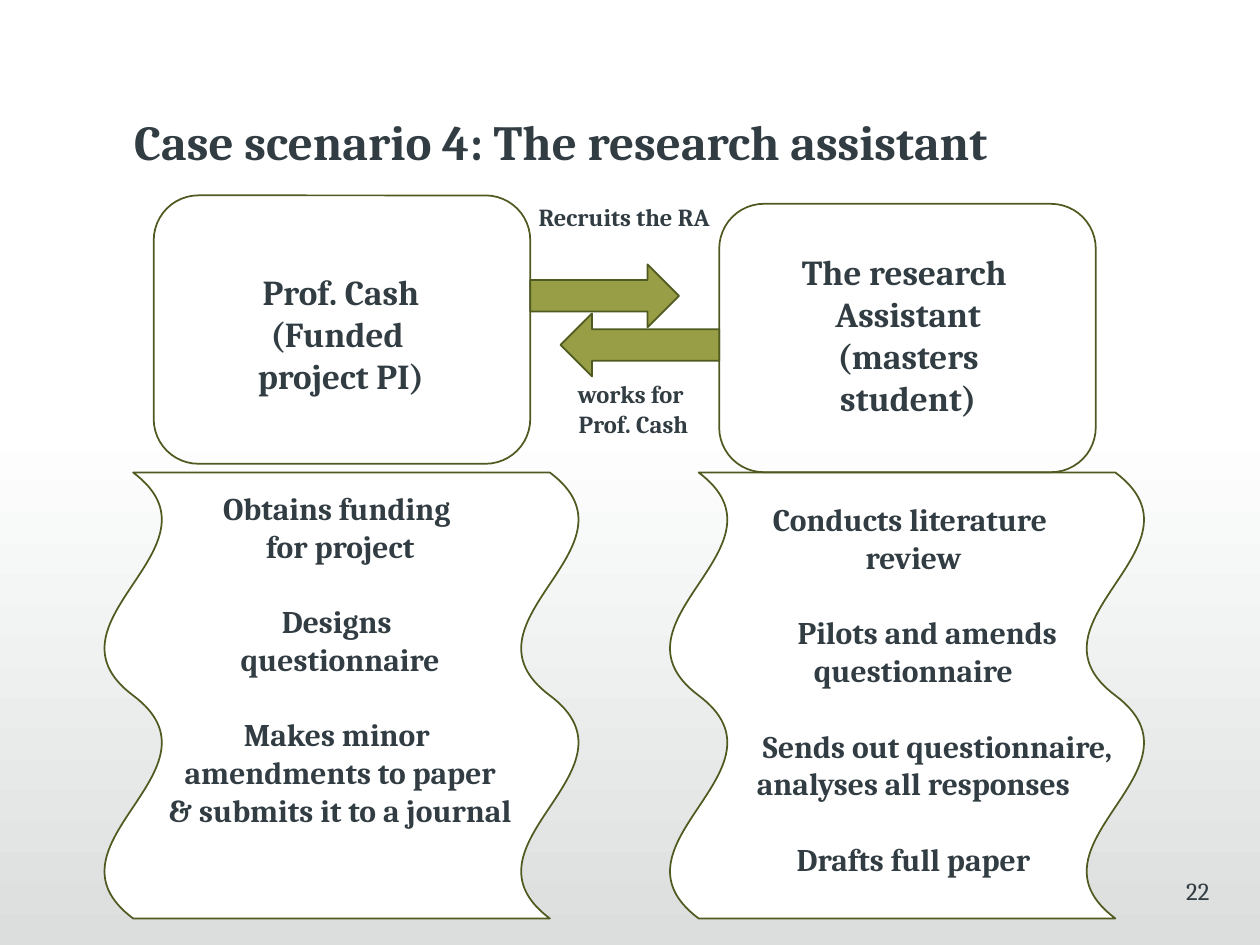
import pptx
import pptx.util
import pptx.dml.color
import pptx.enum.shapes
import pptx.enum.text

Cm, Pt = pptx.util.Cm, pptx.util.Pt
SHAPE = pptx.enum.shapes.MSO_SHAPE
ALIGN = pptx.enum.text.PP_ALIGN
COLORS = {
    "white": "FFFFFF",
    "mist": "DCDEDE",
    "outline": "4F5A20",
    "olive": "979E45",
    "ink": "323D43",
}


def rgb(name):
    return pptx.dml.color.RGBColor.from_string(COLORS[name])


class SlideBuilder:
    font = "Cambria"
    block_gap = Pt(21.5)

    def __init__(self, slide):
        self.s = slide

    def gradient(self, *box):
        """Add an unlined rectangle fading downwards from white to mist."""
        sp = self.s.shapes.add_shape(SHAPE.RECTANGLE, *map(Cm, box))
        sp.shadow.inherit = False
        sp.line.fill.background()
        sp.fill.gradient()
        sp.fill.gradient_angle = 270
        for stop, color in zip(sp.fill.gradient_stops, ("white", "mist")):
            stop.color.rgb = rgb(color)

    def shape(self, kind, *box, fill=None, rotation=0):
        sp = self.s.shapes.add_shape(kind, *map(Cm, box))
        sp.shadow.inherit = False
        sp.rotation = rotation
        if fill:
            sp.fill.solid()
            sp.fill.fore_color.rgb = rgb(fill)
        else:
            sp.fill.background()
        sp.line.color.rgb = rgb("outline")
        sp.line.width = Pt(1)

    def text(self, blocks, *box, size, wrap=False, bold=True, align=ALIGN.CENTER, right_inset=0.25):
        """Write blocks of (first-line indent in cm, lines), set apart by a gap."""
        tb = self.s.shapes.add_textbox(*map(Cm, box))
        tf = tb.text_frame
        tf.word_wrap = wrap
        tf.auto_size = pptx.enum.text.MSO_AUTO_SIZE.SHAPE_TO_FIT_TEXT
        tf.margin_right = Cm(right_inset)
        tf.text = "\n".join(line for _, lines in blocks for line in lines)
        paragraphs = iter(tf.paragraphs)
        for i, (indent, lines) in enumerate(blocks):
            for j in range(len(lines)):
                p = next(paragraphs)
                p.alignment = align
                if i and not j:
                    p.space_before = self.block_gap
                if indent:
                    p._p.get_or_add_pPr().set("indent", str(Cm(indent)))
                for r in p.runs:
                    r.font.name = self.font
                    r.font.size = Pt(size)
                    r.font.bold = bold
                    r.font.color.rgb = rgb("ink")

    def label(self, lines, *box, **style):
        self.text([(0, lines)], *box, **style)


def main():
    prs = pptx.Presentation()
    prs.slide_width, prs.slide_height = Cm(25.4), Cm(19.05)
    b = SlideBuilder(prs.slides.add_slide(prs.slide_layouts[6]))

    b.gradient(0, 8.46, 25.4, 10.59)
    b.label(["Case scenario 4: The research assistant"], 1.02, 2.13, 20.57, 1.45, size=28)
    b.label(["22"], 19.1, 17.53, 5.28, 1.27, size=14, wrap=True, bold=False,
            align=ALIGN.RIGHT, right_inset=0)

    for left in (2.39, 13.79):
        b.shape(SHAPE.DOUBLE_WAVE, left, 9.22, 8.99, 9.6, fill="white", rotation=270)
    for left, top in ((3.1, 3.94), (14.5, 4.11)):
        b.shape(SHAPE.ROUNDED_RECTANGLE, left, top, 7.59, 5.41)
    b.shape(SHAPE.RIGHT_ARROW, 10.69, 5.33, 3, 1.27, fill="olive")
    b.shape(SHAPE.LEFT_ARROW, 11.3, 6.32, 3.2, 1.27, fill="olive")

    b.label(["Prof. Cash", "(Funded ", "project PI)"], 4.65, 5.33, 4.45, 2.82, size=20)
    b.label(["The research ", "Assistant", "(masters", "student)"],
            15.67, 4.93, 5.28, 5.38, size=20)
    b.label(["Recruits the RA"], 10.49, 3.94, 4.19, 1.45, size=14, wrap=True)
    b.label(["works for ", "Prof. Cash"], 11.18, 7.52, 3.18, 1.45, size=14)

    professor_tasks = [
        (0, ["Obtains funding ", "for project"]),
        (0, ["Designs ", "questionnaire"]),
        (0, ["Makes minor ", "amendments to paper", "& submits it to a journal"]),
    ]
    assistant_tasks = [
        (0, ["Conducts literature ", "review"]),
        (0.56, ["Pilots and amends questionnaire"]),
        (0.98, ["Sends out questionnaire, analyses all responses"]),
        (0, ["Drafts full paper"]),
    ]
    b.text(professor_tasks, 0.51, 9.73, 12.7, 7.19, size=18, wrap=True)
    b.text(assistant_tasks, 13.31, 9.96, 10.21, 8.4, size=18, wrap=True)

    prs.save("out.pptx")


if __name__ == "__main__":
    main()
